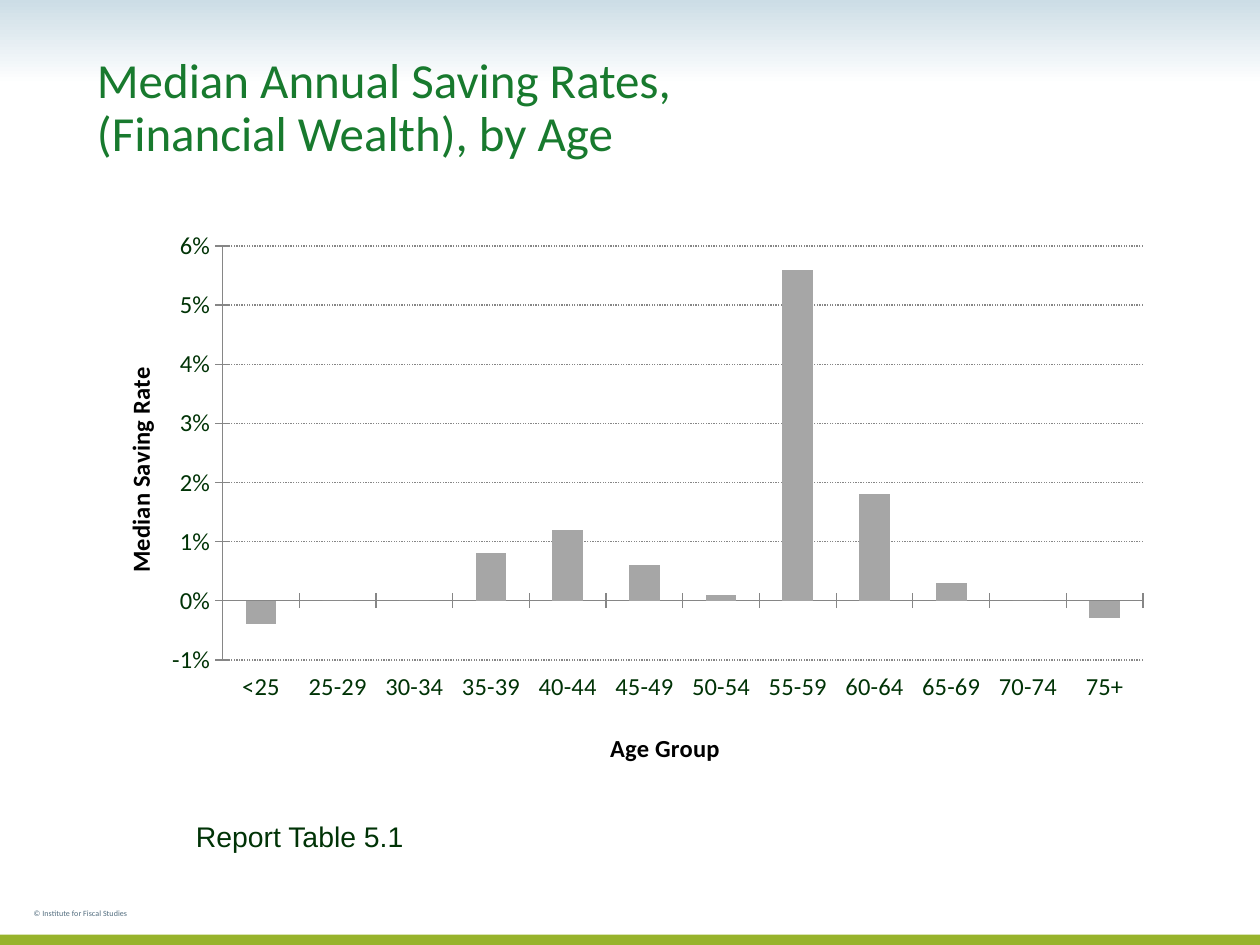
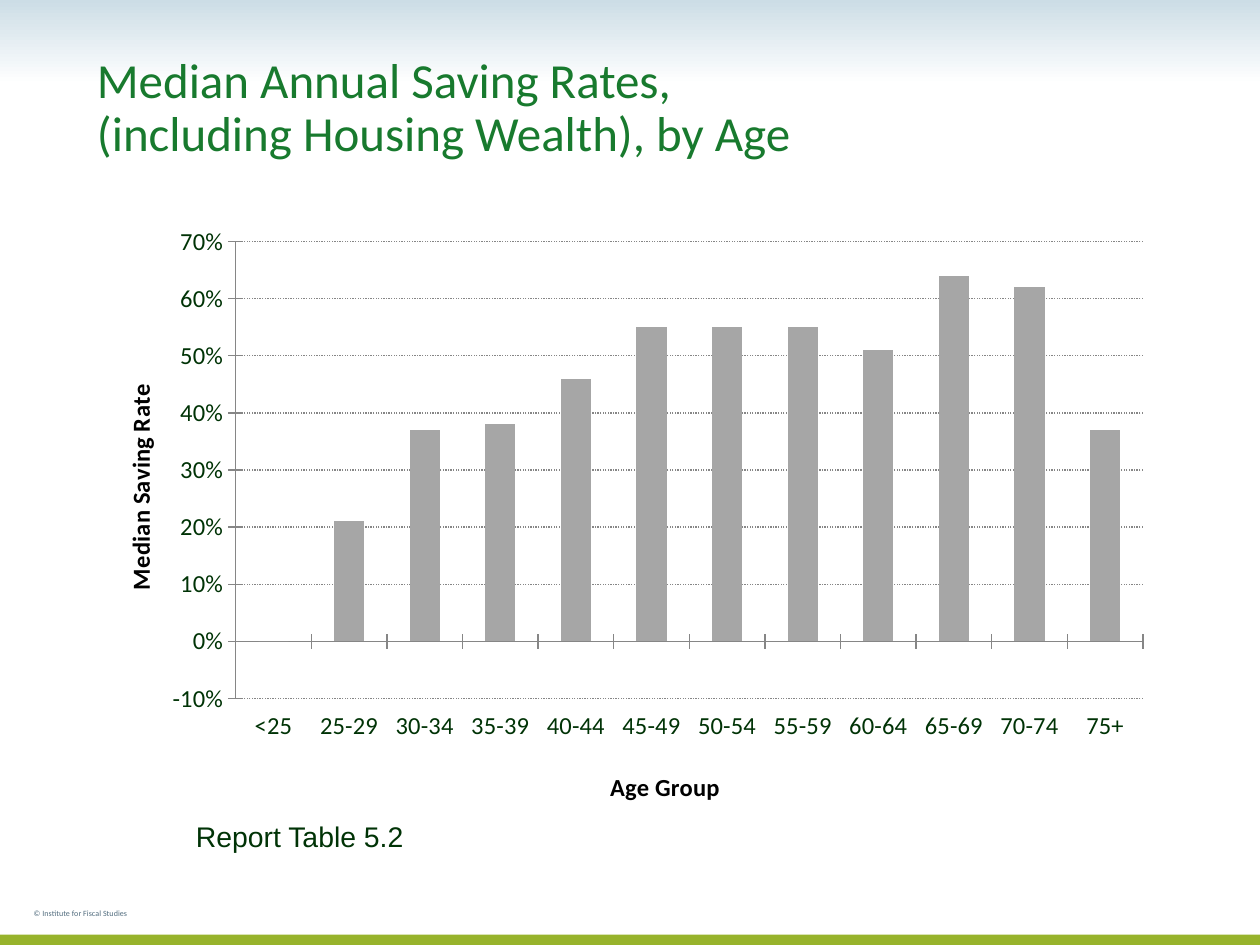
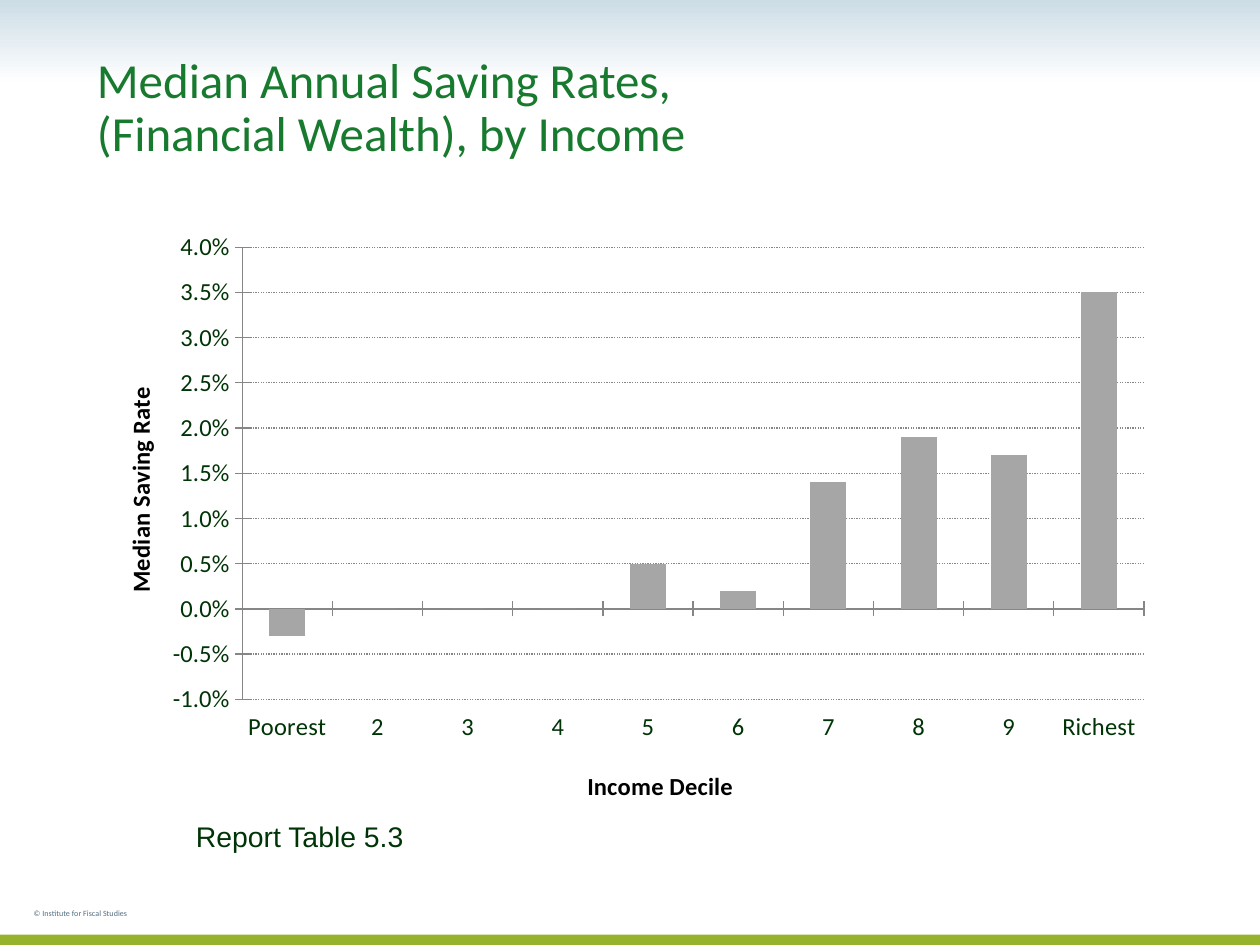
from dataclasses import dataclass

from lxml import etree
from pptx import Presentation
from pptx import util as u
from pptx.chart.data import CategoryChartData
from pptx.dml.color import RGBColor
from pptx.enum import chart as ch, dml, shapes, text
from pptx.oxml.ns import qn

INK, GREEN, LIME, SKY, SLATE = "003306", "187A2E", "97B32C", "CCDDE6", "526D7F"
WHITE, BLACK, BAR, AXIS = "FFFFFF", "000000", "A6A6A6", "868686"
AGES = ["<25"] + [f"{start}-{start + 4}" for start in range(25, 75, 5)] + ["75+"]
DECILES = ["Poorest"] + [str(n) for n in range(2, 10)] + ["Richest"]


@dataclass
class Box:
    """A rectangle in centimetres."""
    left: float
    top: float
    width: float
    height: float

    def emu(self):
        """Return the four lengths for python-pptx."""
        return [u.Cm(v) for v in (self.left, self.top, self.width, self.height)]


@dataclass
class Rates:
    """The content of one saving-rate slide."""
    scope: str
    report: str
    frame: Box
    plot: Box
    groups: str
    categories: list
    values: list
    scale: tuple
    number_format: str


def rgb(value):
    """Turn a hex string into a colour."""
    return RGBColor.from_string(value)


def style(font, name, size, colour, bold=None):
    """Set the look of a font."""
    font.name, font.size, font.bold = name, u.Pt(size), bold
    font.color.rgb = rgb(colour)


def add_bands(slide, layout):
    """Put the sky band and the base band on the layout."""
    sky, base = [slide.shapes.add_shape(shapes.MSO_SHAPE.RECTANGLE, *box.emu())
                 for box in (Box(0, 0, 25.4, 1.7), Box(0, 18.84, 25.4, 0.21))]
    sky.fill.gradient()
    sky.fill.gradient_angle = 270
    for stop, colour in zip(sky.fill.gradient_stops, (SKY, WHITE)):
        stop.color.rgb = rgb(colour)
    base.fill.solid()
    base.fill.fore_color.rgb = rgb(LIME)
    for band in (sky, base):
        band.line.fill.background()
        band.shadow.inherit = False
        layout.shapes.element.append(band.element)


def add_title(slide, wording, box):
    """Fill the title placeholder."""
    title = slide.shapes.title
    title.left, title.top, title.width, title.height = box.emu()
    frame = title.text_frame
    frame.text = wording
    frame.vertical_anchor = text.MSO_ANCHOR.BOTTOM
    frame.auto_size = text.MSO_AUTO_SIZE.NONE
    heading = frame.paragraphs[0]
    heading.alignment = text.PP_ALIGN.LEFT
    heading.line_spacing = 0.9
    style(heading.font, "Calibri", 28, GREEN)


def add_lowered_note(slide, wording, box, font, size, colour):
    """Add a line of subscript text."""
    note = slide.shapes.add_textbox(*box.emu())
    note.text_frame.word_wrap = True
    note.text_frame.text = wording
    style(note.text_frame.paragraphs[0].font, font, size, colour)
    for properties in note.element.iter(qn("a:defRPr")):
        properties.set("baseline", "-25000")
    return note


def place(element, index, **fractions):
    """Give a chart part a manual layout in fractions of the chart."""
    for old in element.findall(qn("c:layout")):
        element.remove(old)
    layout = etree.Element(qn("c:layout"))
    manual = etree.SubElement(layout, qn("c:manualLayout"))
    settings = {"xMode": "edge", "yMode": "edge", **fractions}
    if "w" in fractions:
        settings = {"layoutTarget": "inner", **settings}
    for tag, value in settings.items():
        etree.SubElement(manual, qn(f"c:{tag}")).set("val", str(value))
    element.insert(index, layout)


def add_axis_title(axis, wording, frame, left, top):
    """Title an axis at a point of the slide."""
    title = axis.axis_title
    title.text_frame.text = wording
    style(title.text_frame.paragraphs[0].font, "Calibri", 14, BLACK, True)
    place(title.element, 1, x=round((left - frame.left) / frame.width, 3),
          y=round((top - frame.top) / frame.height, 3))


def add_rate_chart(slide, rates):
    """Draw the columns of saving rates."""
    frame, plot = rates.frame, rates.plot
    data = CategoryChartData()
    data.categories = rates.categories
    data.add_series("Series 1", rates.values)
    chart = slide.shapes.add_chart(
        ch.XL_CHART_TYPE.COLUMN_CLUSTERED, *frame.emu(), data).chart
    style(chart.font, "Calibri", 10, INK)
    chart.has_legend = chart.has_title = False
    columns = chart.plots[0]
    columns.gap_width, columns.vary_by_categories = 150, False
    series = columns.series[0]
    series.invert_if_negative = False
    series.format.fill.solid()
    series.format.fill.fore_color.rgb = rgb(BAR)

    groups, rate = chart.category_axis, chart.value_axis
    for axis in (groups, rate):
        style(axis.tick_labels.font, "Calibri", 14, INK)
        axis.major_tick_mark = ch.XL_TICK_MARK.CROSS
        axis.format.line.color.rgb = rgb(AXIS)
        axis.format.line.width = u.Pt(0.75)
    groups.tick_label_position = ch.XL_TICK_LABEL_POSITION.LOW
    rate.minimum_scale, rate.maximum_scale, rate.major_unit = rates.scale
    rate.tick_labels.number_format = rates.number_format
    rate.tick_labels.number_format_is_linked = False
    grid = rate.major_gridlines.format.line
    grid.color.rgb, grid.width = rgb(AXIS), u.Pt(0.75)
    grid.dash_style = dml.MSO_LINE.ROUND_DOT

    add_axis_title(groups, rates.groups, frame,
                   13.27 - 0.117 * len(rates.groups), plot.top + plot.height + 1.33)
    add_axis_title(rate, "Median Saving Rate", frame,
                   2.4, plot.top + plot.height / 2 - 1.82)
    place(chart.element.find(f".//{qn('c:plotArea')}"), 0,
          x=round((plot.left - frame.left) / frame.width, 3),
          y=round((plot.top - frame.top) / frame.height, 3),
          w=round(plot.width / frame.width, 3),
          h=round(plot.height / frame.height, 3))


def add_rate_slide(slide, rates):
    """Fill a slide with title, footer, chart and table reference."""
    add_title(slide, f"Median Annual Saving Rates,\v{rates.scope}",
              Box(1.7, 0.64, 21.8, 2.75))
    add_lowered_note(slide, "© Institute for Fiscal Studies",
                     Box(0.43, 17.99, 6.99, 0.64), "Calibri", 8, SLATE)
    add_rate_chart(slide, rates)
    reference = add_lowered_note(slide, f"Report Table {rates.report}",
                                 Box(3.7, 15.72, 9.8, 1.06), "Arial", 28, INK)
    reference.text_frame.auto_size = text.MSO_AUTO_SIZE.SHAPE_TO_FIT_TEXT


SLIDES = [
    Rates("(Financial Wealth), by Age", "5.1",
          Box(1.7, 4.44, 21.8, 11.28), Box(4.5, 4.96, 18.56, 8.35),
          "Age Group", AGES,
          [-0.004, 0, 0, 0.008, 0.012, 0.006, 0.001, 0.056, 0.018, 0.003, 0, -0.003],
          (-0.01, 0.06, 0.01), "0%"),
    Rates("(including Housing Wealth), by Age", "5.2",
          Box(1.7, 4.32, 21.8, 12.19), Box(4.76, 4.87, 18.3, 9.22),
          "Age Group", AGES,
          [0, 0.21, 0.37, 0.38, 0.46, 0.55, 0.55, 0.55, 0.51, 0.64, 0.62, 0.37],
          (-0.1, 0.7, 0.1), "0%"),
    Rates("(Financial Wealth), by Income", "5.3",
          Box(1.7, 4.44, 21.8, 12.09), Box(4.88, 4.98, 18.18, 9.11),
          "Income Decile", DECILES,
          [-0.003, 0, 0, 0, 0.005, 0.002, 0.014, 0.019, 0.017, 0.035],
          (-0.01, 0.04, 0.005), "0.0%"),
]


def main():
    """Build and save the presentation."""
    deck = Presentation()
    deck.slide_width, deck.slide_height = u.Cm(25.4), u.Cm(19.05)
    layout = deck.slide_layouts.get_by_name("Title Only")
    for number, rates in enumerate(SLIDES):
        slide = deck.slides.add_slide(layout)
        if number == 0:
            add_bands(slide, layout)
        add_rate_slide(slide, rates)
    deck.save("out.pptx")


if __name__ == "__main__":
    main()
